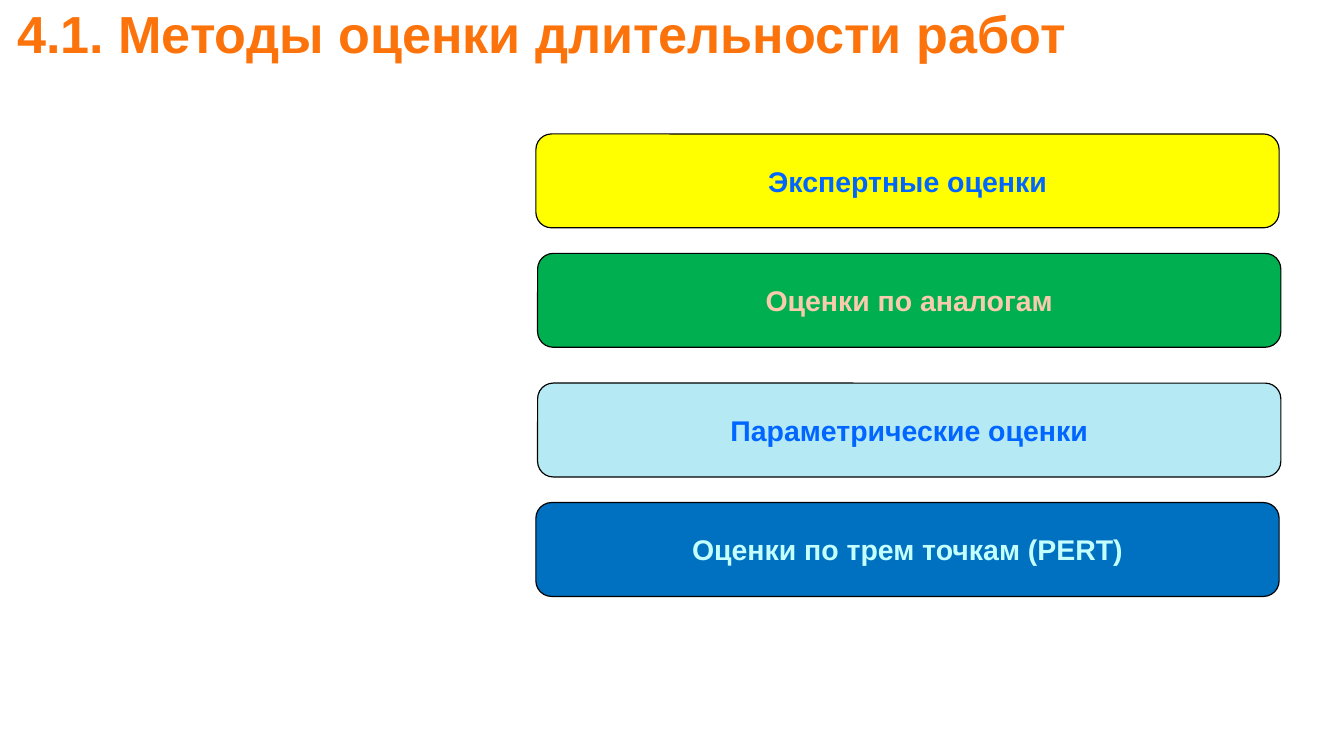
from dataclasses import dataclass

from pptx import Presentation
from pptx.dml.color import RGBColor
from pptx.enum.shapes import MSO_SHAPE
from pptx.enum.text import MSO_ANCHOR, PP_ALIGN
from pptx.util import Inches, Pt


@dataclass(frozen=True)
class Theme:
    """Colours, font and type sizes of the slide."""
    font: str = "Arial"
    title_size: int = 44
    method_size: int = 24
    title: str = "FC730C"
    outline: str = "000000"
    yellow: str = "FFFF00"
    green: str = "00B050"
    pale_blue: str = "B5E9F4"
    deep_blue: str = "0070C0"
    blue_text: str = "0066FF"
    peach_text: str = "F8CBAD"
    ice_text: str = "C4FFFF"


THEME = Theme()
METHODS = [
    ("Экспертные оценки", THEME.yellow, THEME.blue_text, 0, 0),
    ("Оценки по аналогам", THEME.green, THEME.peach_text, 0.02, 1.4),
    ("Параметрические оценки", THEME.pale_blue, THEME.blue_text, 0.02, 2.92),
    ("Оценки по трем точкам (PERT)", THEME.deep_blue, THEME.ice_text, 0, 4.32),
]


def write_line(frame, wording, size, color, align):
    """Write one bold, vertically centred line into a text frame."""
    frame.word_wrap = True
    frame.vertical_anchor = MSO_ANCHOR.MIDDLE
    line = frame.paragraphs[0]
    line.alignment = align
    run = line.add_run()
    run.text = wording
    run.font.name = THEME.font
    run.font.size = Pt(size)
    run.font.bold = True
    run.font.color.rgb = RGBColor.from_string(color)


def add_title(slide, left, top, width, height):
    """Place the slide title in the given box."""
    box = slide.shapes.add_textbox(Inches(left), Inches(top), Inches(width), Inches(height))
    frame = box.text_frame
    frame.margin_left = frame.margin_right = Inches(0.12)
    frame.margin_top = frame.margin_bottom = Inches(0.12)
    write_line(frame, "4.1. Методы оценки длительности работ",
               THEME.title_size, THEME.title, PP_ALIGN.LEFT)


def add_methods(slide, left, top, width, bar_height):
    """Stack the estimation methods as rounded bars from the given corner."""
    for wording, fill, text_color, shift, drop in METHODS:
        bar = slide.shapes.add_shape(
            MSO_SHAPE.ROUNDED_RECTANGLE, Inches(left + shift), Inches(top + drop),
            Inches(width), Inches(bar_height))
        bar.shadow.inherit = False
        bar.fill.solid()
        bar.fill.fore_color.rgb = RGBColor.from_string(fill)
        bar.line.color.rgb = RGBColor.from_string(THEME.outline)
        bar.line.width = Pt(1)
        write_line(bar.text_frame, wording, THEME.method_size, text_color, PP_ALIGN.CENTER)


def main():
    """Build and save the presentation."""
    presentation = Presentation()
    presentation.slide_width = Inches(15.75)
    presentation.slide_height = Inches(8.86)
    slide = presentation.slides.add_slide(presentation.slide_layouts[6])
    add_title(slide, 0.08, -0.56, 15.75, 1.89)
    add_methods(slide, 6.28, 1.57, 8.71, 1.1)
    presentation.save("out.pptx")


if __name__ == "__main__":
    main()
